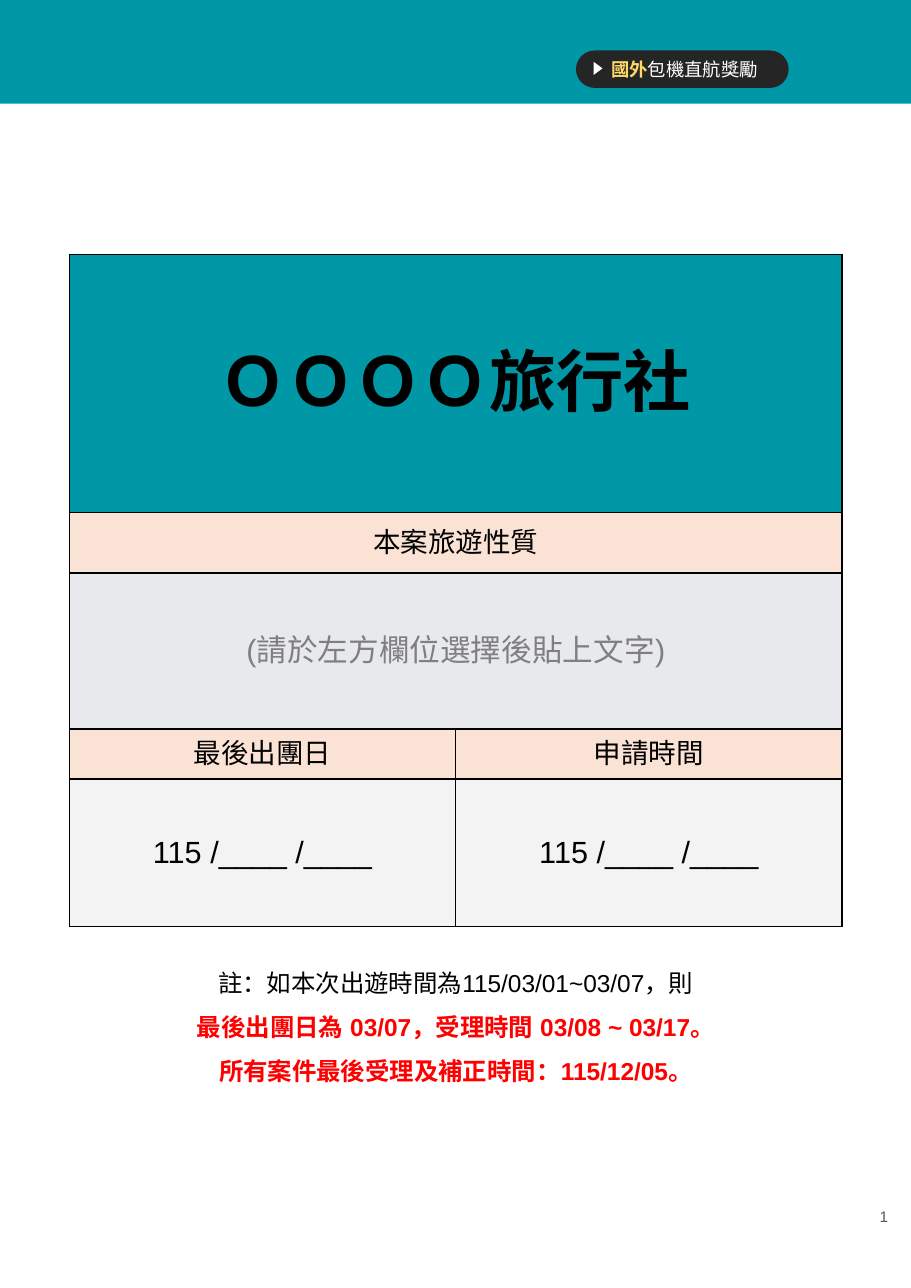
from dataclasses import dataclass

from lxml import etree
from pptx import Presentation
from pptx.dml.color import RGBColor
from pptx.enum.shapes import MSO_SHAPE
from pptx.enum.text import MSO_ANCHOR, PP_ALIGN
from pptx.oxml.ns import qn
from pptx.util import Pt

RECTANGLE = MSO_SHAPE.RECTANGLE
PILL = MSO_SHAPE.ROUNDED_RECTANGLE
TRIANGLE = MSO_SHAPE.ISOSCELES_TRIANGLE
CENTER, RIGHT = PP_ALIGN.CENTER, PP_ALIGN.RIGHT
TOP, MIDDLE = MSO_ANCHOR.TOP, MSO_ANCHOR.MIDDLE


@dataclass(frozen=True)
class Theme:
    font: str = "Arial"
    teal: str = "0097A7"
    peach: str = "FAE2D5"
    mist: str = "E7E9EC"
    pale: str = "F3F3F3"
    charcoal: str = "252525"
    gold: str = "FFD966"
    white: str = "FFFFFF"
    black: str = "000000"
    hint: str = "7F7F7F"
    alert: str = "FF0000"
    folio: str = "595959"
    title_size: int = 44
    entry_size: int = 20
    heading_size: int = 18
    note_size: int = 16
    tag_size: int = 12
    folio_size: int = 10
    border: float = 1


class FormPage:
    def __init__(self, slide, theme):
        self.slide = slide
        self.theme = theme

    def style(self, para, size, color, bold=False, align=CENTER):
        """Set the paragraph font for both Latin and East Asian text."""
        para.alignment = align
        para.font.size = Pt(size)
        para.font.bold = bold
        para.font.color.rgb = RGBColor.from_string(color)
        para.font.name = self.theme.font
        defaults = para._p.pPr.find(qn("a:defRPr"))
        etree.SubElement(defaults, qn("a:ea"), typeface=self.theme.font)

    def shape(self, kind, left, top, width, height, color):
        shape = self.slide.shapes.add_shape(
            kind, Pt(left), Pt(top), Pt(width), Pt(height))
        shape.shadow.inherit = False
        shape.fill.solid()
        shape.fill.fore_color.rgb = RGBColor.from_string(color)
        shape.line.fill.background()
        return shape

    def tag(self, left, top, width, height, spans):
        """Draw a pill whose text is a list of (text, color, bold) spans."""
        pill = self.shape(PILL, left, top, width, height, self.theme.charcoal)
        pill.adjustments[0] = 0.5
        frame = pill.text_frame
        frame.vertical_anchor = MIDDLE
        frame.margin_left, frame.margin_right = Pt(10), Pt(7)
        para = frame.paragraphs[0]
        self.style(para, self.theme.tag_size, self.theme.white)
        for text, color, bold in spans:
            span = para.add_run()
            span.text = text
            span.font.color.rgb = RGBColor.from_string(color)
            span.font.bold = bold

    def text(self, left, top, width, height, lines, size, align=CENTER,
             anchor=TOP, spacing=1.0, margin=7.2):
        """Add a text box from a list of (text, color, bold) lines."""
        box = self.slide.shapes.add_textbox(
            Pt(left), Pt(top), Pt(width), Pt(height))
        frame = box.text_frame
        frame.word_wrap = True
        frame.vertical_anchor = anchor
        frame.margin_top = frame.margin_bottom = Pt(margin)
        for index, (text, color, bold) in enumerate(lines):
            para = frame.paragraphs[0] if index == 0 else frame.add_paragraph()
            para.text = text
            para.line_spacing = spacing
            self.style(para, size, color, bold, align)

    def outline(self, cell):
        properties = cell._tc.get_or_add_tcPr()
        for index, side in enumerate(("lnL", "lnR", "lnT", "lnB")):
            line = etree.Element(qn(f"a:{side}"), w=str(Pt(self.theme.border)))
            fill = etree.SubElement(line, qn("a:solidFill"))
            etree.SubElement(fill, qn("a:srgbClr"), val=self.theme.black)
            properties.insert(index, line)

    def table(self, left, top, width, rows):
        """Rows are (height, fill, texts, size, color, bold); one text spans the row."""
        columns = max(len(row[2]) for row in rows)
        height = sum(row[0] for row in rows)
        table = self.slide.shapes.add_table(
            len(rows), columns, Pt(left), Pt(top), Pt(width), Pt(height)).table
        table.first_row = table.horz_banding = False
        for column in table.columns:
            column.width = Pt(width / columns)
        for index, (height, fill, texts, size, color, bold) in enumerate(rows):
            table.rows[index].height = Pt(height)
            cells = [table.cell(index, column) for column in range(columns)]
            if len(texts) == 1:
                cells[0].merge(cells[-1])
            for cell in cells:
                cell.fill.solid()
                cell.fill.fore_color.rgb = RGBColor.from_string(fill)
                cell.vertical_anchor = MIDDLE
                self.outline(cell)
            for cell, text in zip(cells, texts):
                para = cell.text_frame.paragraphs[0]
                para.text = text
                self.style(para, size, color, bold)


def main():
    deck = Presentation()
    deck.slide_width, deck.slide_height = Pt(595.44), Pt(841.68)
    theme = Theme()
    page = FormPage(deck.slides.add_slide(deck.slide_layouts[6]), theme)

    page.shape(RECTANGLE, -5, -3.6, 602, 71.3, theme.teal)
    page.tag(376.5, 33, 139, 24.5, [
        ("國外", theme.gold, True),
        ("包機直航獎勵", theme.white, False),
    ])
    pointer = page.shape(TRIANGLE, 386.6, 41.8, 8.6, 5.8, theme.white)
    pointer.rotation = 90

    margin, content_width = 45.4, 505
    date_blank = "115 /____ /____"
    page.table(margin, 166.3, content_width, [
        (168.5, theme.teal, ["ＯＯＯＯ旅行社"],
         theme.title_size, theme.black, True),
        (39.6, theme.peach, ["本案旅遊性質"],
         theme.heading_size, theme.black, False),
        (102, theme.mist, ["(請於左方欄位選擇後貼上文字)"],
         theme.entry_size, theme.hint, False),
        (32.6, theme.peach, ["最後出團日", "申請時間"],
         theme.heading_size, theme.black, False),
        (96.5, theme.pale, [date_blank, date_blank],
         theme.entry_size, theme.black, False),
    ])
    page.text(551.5, 763.2, 36, 64, [("1", theme.folio, False)],
              theme.folio_size, align=RIGHT, anchor=MIDDLE, margin=3.6)
    page.text(margin, 615.6, content_width, 92.2, [
        ("註：如本次出遊時間為115/03/01~03/07，則", theme.black, False),
        ("最後出團日為 03/07，受理時間 03/08 ~ 03/17。", theme.alert, True),
        ("所有案件最後受理及補正時間：115/12/05。", theme.alert, True),
    ], theme.note_size, spacing=1.5)

    deck.save("out.pptx")


if __name__ == "__main__":
    main()
